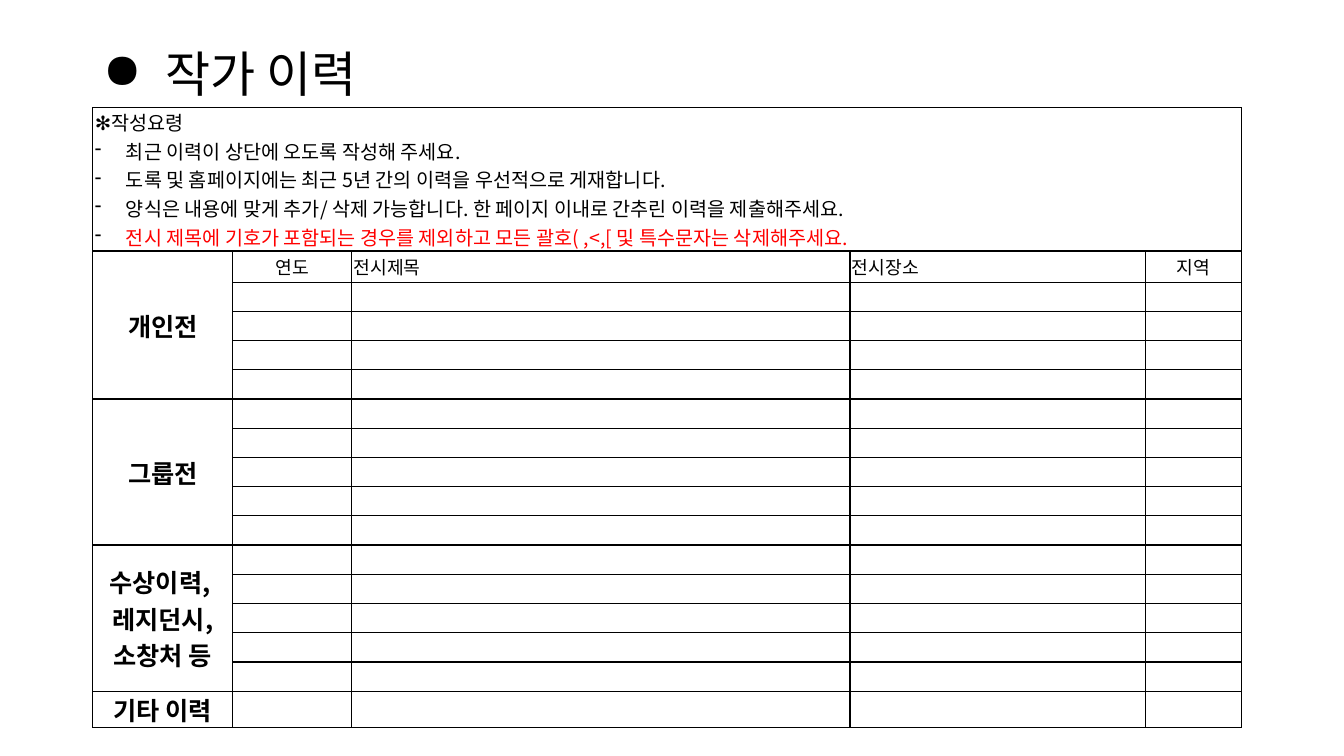
"""Build the artist career form slide."""
import pptx
import pptx.dml.color
import pptx.enum.text
import pptx.oxml.ns
import pptx.util
from lxml import etree

Inches = pptx.util.Inches
Pt = pptx.util.Pt
ALIGN = pptx.enum.text.PP_ALIGN
MIDDLE = pptx.enum.text.MSO_ANCHOR.MIDDLE
FONT = "Noto Sans CJK KR"
COLORS = {"text": "000000", "warning": "FF0000"}

COL_WIDTHS = [1.39, 1.18, 4.94, 2.93, 0.95]
ROW_HEIGHTS = [1.42, 0.31] + [0.29] * 14 + [0.36]
GUIDE = [
    "최근 이력이 상단에 오도록 작성해 주세요.",
    "도록 및 홈페이지에는 최근 5년 간의 이력을 우선적으로 게재합니다.\u00a0",
    "양식은 내용에 맞게 추가/ 삭제 가능합니다. 한 페이지 이내로 간추린 이력을 제출해주세요.",
]
WARNING = "전시 제목에 기호가 포함되는 경우를 제외하고 모든 괄호( ,<,[ 및 특수문자는 삭제해주세요."
HEADERS = [("연도", ALIGN.CENTER), ("전시제목", ALIGN.JUSTIFY),
           ("전시장소", ALIGN.JUSTIFY), ("지역", ALIGN.CENTER)]
SECTIONS = [
    (["개인전"], 5),
    (["그룹전"], 5),
    (["수상이력, ", "레지던시, 소창처 등"], 5),
    (["기타 이력"], 1),
]


def add_node(parent, tag, **attrs):
    """Append a DrawingML child element."""
    return etree.SubElement(parent, pptx.oxml.ns.qn(tag), attrs)


def add_text(tf, text, size, color="text", bold=False, align=ALIGN.LEFT,
             bullet=None, indent=0, spacing=None):
    """Write a formatted paragraph, filling the first one if it is empty."""
    p = tf.paragraphs[0]
    if p.runs:
        p = tf.add_paragraph()
    p.alignment = align
    if spacing:
        p.line_spacing = spacing
    if bullet:
        pPr = p._p.get_or_add_pPr()
        pPr.set("marL", str(Inches(indent)))
        pPr.set("indent", str(-Inches(indent)))
        add_node(add_node(pPr, "a:buClr"), "a:srgbClr", val=COLORS["text"])
        add_node(pPr, "a:buChar", char=bullet)
    r = p.add_run()
    r.text = text
    r.font.size = Pt(size)
    r.font.bold = bold
    r.font.name = FONT
    r.font.color.rgb = pptx.dml.color.RGBColor.from_string(COLORS[color])
    add_node(r._r.get_or_add_rPr(), "a:ea", typeface=FONT)


def add_title(s, text):
    """Place the bulleted slide title."""
    sp = s.shapes.title
    sp.left, sp.top = Inches(0.92), Inches(0.12)
    sp.width, sp.height = Inches(11.5), Inches(1.29)
    tf = sp.text_frame
    tf.vertical_anchor = MIDDLE
    tf.auto_size = pptx.enum.text.MSO_AUTO_SIZE.NONE
    add_text(tf, text, 35, bullet="●", indent=0.62, spacing=0.9)


def format_cell(cell):
    """Give a cell thin borders, no fill, tight margins and small empty text."""
    cell.margin_left = cell.margin_right = Inches(0.02)
    cell.margin_top = cell.margin_bottom = 0
    cell.vertical_anchor = MIDDLE
    tcPr = cell._tc.get_or_add_tcPr()
    for side in "LRTB":
        ln = add_node(tcPr, f"a:ln{side}", w=str(Pt(1)))
        add_node(add_node(ln, "a:solidFill"), "a:srgbClr", val=COLORS["text"])
    cell.fill.background()
    add_node(cell.text_frame.paragraphs[0]._p, "a:endParaRPr", sz="1000")


def add_form_table(s):
    """Add the empty ruled table and return it."""
    frame = s.shapes.add_table(
        len(ROW_HEIGHTS), len(COL_WIDTHS), Inches(0.92), Inches(1.07),
        Inches(sum(COL_WIDTHS)), Inches(sum(ROW_HEIGHTS)))
    table = frame.table
    table.first_row = table.horz_banding = False
    for col, width in zip(table.columns, COL_WIDTHS):
        col.width = Inches(width)
    for row, height in zip(table.rows, ROW_HEIGHTS):
        row.height = Inches(height)
    for cell in table.iter_cells():
        format_cell(cell)
    return table


def fill_guide(table):
    """Write the instructions across the top row."""
    cell = table.cell(0, 0)
    cell.merge(table.cell(0, len(COL_WIDTHS) - 1))
    tf = cell.text_frame
    add_text(tf, "✻작성요령", 14)
    for line in GUIDE:
        add_text(tf, line, 14, bullet="-", indent=0.31)
    add_text(tf, WARNING, 14, color="warning", bullet="-", indent=0.31)


def fill_sections(table):
    """Write the column headers and the section names."""
    for col, (text, align) in enumerate(HEADERS, start=1):
        add_text(table.cell(1, col).text_frame, text, 13, align=align)
    row = 1
    for lines, span in SECTIONS:
        cell = table.cell(row, 0)
        if span > 1:
            cell.merge(table.cell(row + span - 1, 0))
        for line in lines:
            add_text(cell.text_frame, line, 18, bold=True, align=ALIGN.CENTER)
        row += span


def main():
    """Build and save the slide."""
    prs = pptx.Presentation()
    prs.slide_width, prs.slide_height = Inches(13.33), Inches(7.5)
    s = prs.slides.add_slide(prs.slide_layouts[5])
    add_title(s, "작가 이력")
    table = add_form_table(s)
    fill_guide(table)
    fill_sections(table)
    prs.save("out.pptx")


if __name__ == "__main__":
    main()
